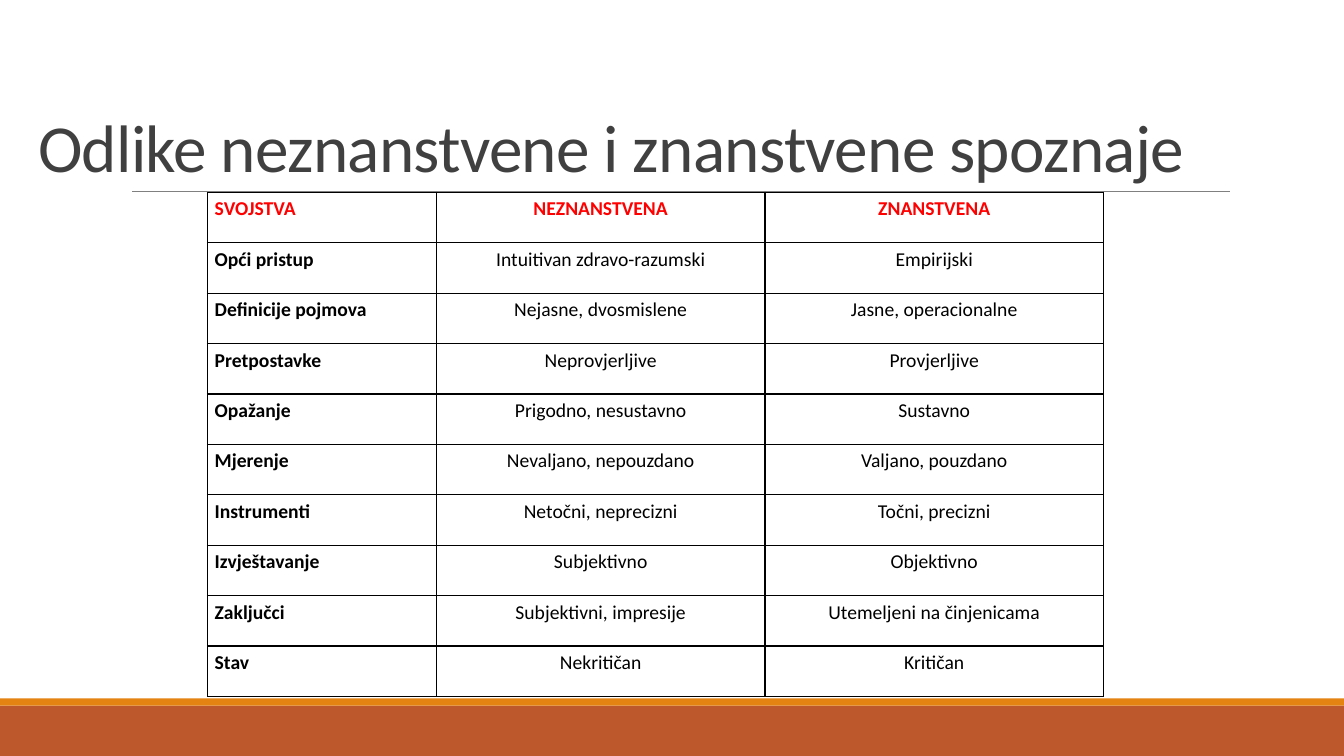
from lxml.etree import SubElement
from pptx import Presentation
from pptx.dml.color import RGBColor
from pptx.enum.shapes import MSO_CONNECTOR, MSO_SHAPE
from pptx.enum.text import MSO_ANCHOR, PP_ALIGN
from pptx.oxml import parse_xml
from pptx.oxml.ns import nsdecls, qn
from pptx.util import Cm, Pt

RUST = RGBColor(0xBD, 0x58, 0x2C)
ORANGE = RGBColor(0xE4, 0x83, 0x12)
GRAY = RGBColor(0x80, 0x80, 0x80)
DARK = RGBColor(0x40, 0x40, 0x40)
RED = RGBColor(0xFF, 0x00, 0x00)
BLACK = RGBColor(0x00, 0x00, 0x00)
FONT = "Calibri"

ROWS = [
    ("SVOJSTVA", "NEZNANSTVENA", "ZNANSTVENA"),
    ("Opći pristup", "Intuitivan zdravo-razumski", "Empirijski"),
    ("Definicije pojmova", "Nejasne, dvosmislene", "Jasne, operacionalne"),
    ("Pretpostavke", "Neprovjerljive", "Provjerljive"),
    ("Opažanje", "Prigodno, nesustavno", "Sustavno"),
    ("Mjerenje", "Nevaljano, nepouzdano", "Valjano, pouzdano"),
    ("Instrumenti", "Netočni, neprecizni", "Točni, precizni"),
    ("Izvještavanje", "Subjektivno", "Objektivno"),
    ("Zaključci", "Subjektivni, impresije", "Utemeljeni na činjenicama"),
    ("Stav", "Nekritičan", "Kritičan"),
]
COLUMN_WIDTHS = [Cm(5.77), Cm(8.28), Cm(8.53)]
ROW_HEIGHT = Cm(1.27)


def add_borders(cell):
    properties = cell._tc.get_or_add_tcPr()
    for side in ("lnL", "lnR", "lnT", "lnB"):
        properties.append(parse_xml(
            f'<a:{side} {nsdecls("a")} w="{Pt(1)}"><a:solidFill>'
            f'<a:srgbClr val="{BLACK}"/></a:solidFill></a:{side}>'))


deck = Presentation()
deck.slide_width = Cm(33.87)
deck.slide_height = Cm(19.05)
page = deck.slides.add_slide(deck.slide_layouts[6])

# Footer bands
for top, height, color in [(17.78, 1.27, RUST), (17.6, 0.18, ORANGE)]:
    band = page.shapes.add_shape(
        MSO_SHAPE.RECTANGLE, 0, Cm(top), deck.slide_width, Cm(height))
    band.shadow.inherit = False
    band.fill.solid()
    band.fill.fore_color.rgb = color
    band.line.fill.background()

# Rule under the title
rule = page.shapes.add_connector(
    MSO_CONNECTOR.STRAIGHT, Cm(3.33), Cm(4.83), Cm(31), Cm(4.83))
rule.line.color.rgb = GRAY
rule.line.width = Pt(0.5)
SubElement(rule._element.spPr, qn("a:effectLst"))

# Title
title = page.shapes.add_textbox(Cm(0.71), Cm(0.79), Cm(30.28), Cm(4.04))
title.text_frame.word_wrap = True
title.text_frame.vertical_anchor = MSO_ANCHOR.BOTTOM
para = title.text_frame.paragraphs[0]
para.line_spacing = 0.85
para.font.name = FONT
para.font.size = Pt(48)
para.font.color.rgb = DARK
span = para.add_run()
span.text = "Odlike neznanstvene i znanstvene spoznaje"
span._r.get_or_add_rPr().set("spc", "-50")

# Comparison table
table = page.shapes.add_table(
    len(ROWS), len(COLUMN_WIDTHS), Cm(5.23), Cm(4.85),
    sum(COLUMN_WIDTHS), ROW_HEIGHT * len(ROWS)).table
table.first_row = False
table.horz_banding = False
for column, width in zip(table.columns, COLUMN_WIDTHS):
    column.width = width

for row_index, texts in enumerate(ROWS):
    table.rows[row_index].height = ROW_HEIGHT
    for column_index, text in enumerate(texts):
        is_header = row_index == 0
        is_label = column_index == 0
        cell = table.cell(row_index, column_index)
        cell.margin_left = cell.margin_right = Cm(0.18)
        cell.margin_top = Cm(0.03)
        cell.margin_bottom = 0
        add_borders(cell)
        cell.fill.background()
        cell.text = text
        para = cell.text_frame.paragraphs[0]
        para.alignment = PP_ALIGN.LEFT if is_label else PP_ALIGN.CENTER
        para.line_spacing = 1.15
        para.space_after = Pt(10)
        para.font.name = FONT
        para.font.size = Pt(14)
        para.font.bold = is_header or is_label
        para.font.color.rgb = RED if is_header else BLACK

deck.save("out.pptx")
